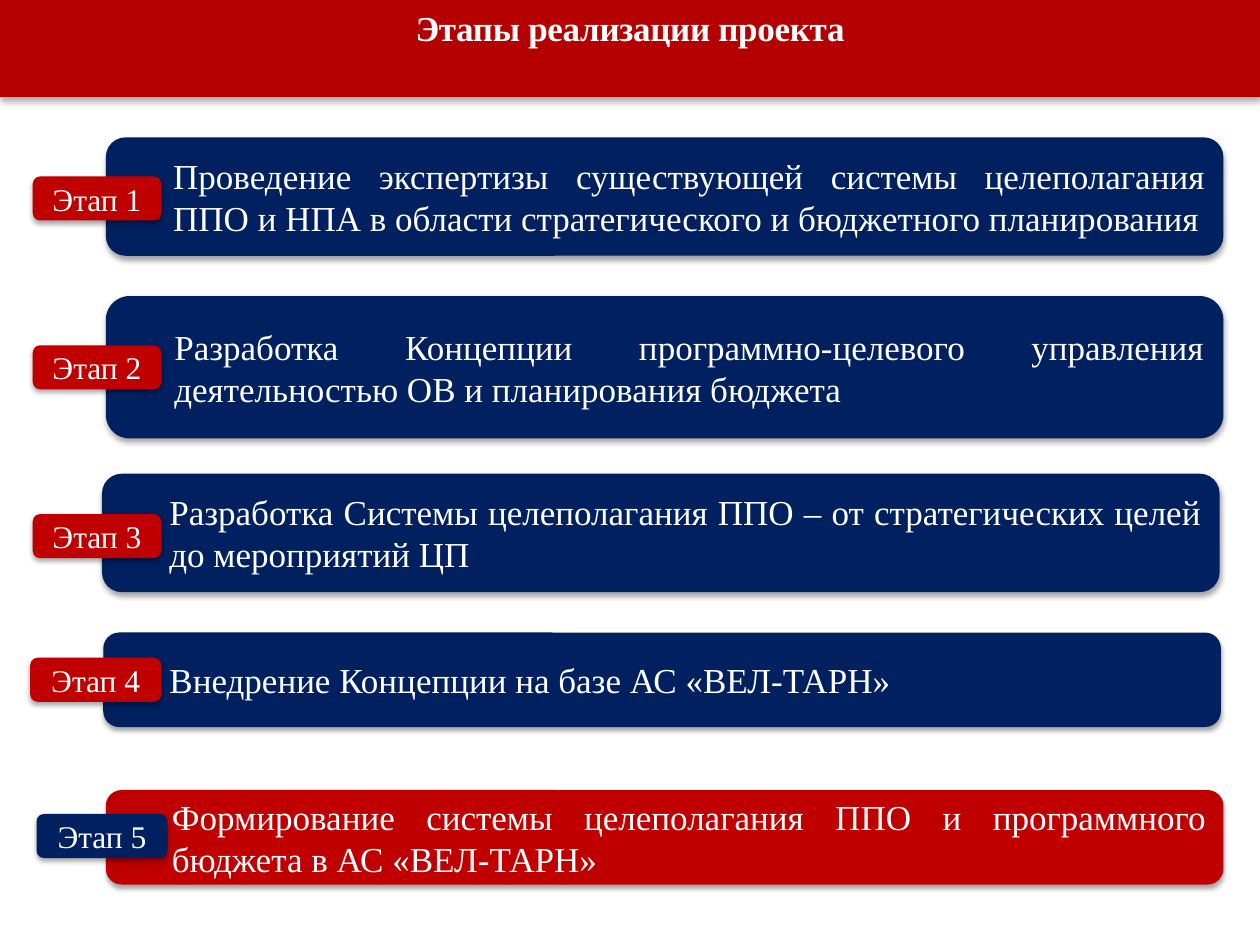
from lxml import etree
from pptx import Presentation
from pptx import util as u
from pptx.dml.color import RGBColor
from pptx.enum import shapes, text
from pptx.oxml import ns

# Grid: 100 columns by 75 rows of equal square cells
COLUMNS, ROWS = 100, 75
CELL = u.Inches(0.1)
FONT = "Times New Roman"
NAVY, RED, HEADER_RED, WHITE = "002060", "C00000", "B40000", "FFFFFF"
BAR_WIDTH, BADGE_HEIGHT = 88.7, 3.5
TEXT_INDENT = u.Inches(0.39)

# Bar left, top, height; badge left, top, width; bar text
STAGES = [
    (8.4, 10.9, 9.4, 2.6, 14.0, 10.2,
     "Проведение экспертизы существующей системы целеполагания ППО и НПА "
     "в области стратегического и бюджетного планирования"),
    (8.4, 23.5, 11.3, 2.6, 27.4, 10.2,
     "Разработка Концепции программно-целевого управления "
     "деятельностью ОВ и планирования бюджета"),
    (8.1, 37.6, 9.4, 2.6, 40.8, 10.2,
     "Разработка Системы целеполагания ППО – от стратегических целей "
     "до мероприятий ЦП"),
    (8.2, 50.2, 7.5, 2.4, 52.2, 10.4,
     "Внедрение Концепции на базе АС «ВЕЛ-ТАРН»"),
    (8.4, 62.7, 7.5, 2.9, 64.6, 10.4,
     "Формирование системы целеполагания ППО и программного "
     "бюджета в АС «ВЕЛ-ТАРН»"),
]


def color(hex_code):
    return RGBColor.from_string(hex_code)


def add_shadow(panel, opacity, blur, distance):
    """Cast a soft black shadow straight down."""
    panel.shadow.inherit = False
    effects = panel._element.spPr.find(ns.qn("a:effectLst"))
    shadow = etree.SubElement(
        effects, ns.qn("a:outerShdw"), blurRad=str(u.Pt(blur)),
        dist=str(u.Pt(distance)), dir="5400000", rotWithShape="0")
    black = etree.SubElement(shadow, ns.qn("a:srgbClr"), val="000000")
    etree.SubElement(black, ns.qn("a:alpha"), val=str(opacity * 1000))


def add_panel(slide, box, kind, fill, wording, size, align,
              anchor=text.MSO_ANCHOR.MIDDLE, shadow=(35, 3.1, 1.8)):
    """Place a filled, captioned shape and return its paragraph."""
    panel = slide.shapes.add_shape(kind, *(round(n * CELL) for n in box))
    panel.fill.solid()
    panel.fill.fore_color.rgb = color(fill)
    panel.line.fill.background()
    add_shadow(panel, *shadow)
    frame = panel.text_frame
    frame.word_wrap = True
    frame.vertical_anchor = anchor
    caption = frame.paragraphs[0]
    caption.text = wording
    caption.alignment = align
    caption.font.name = FONT
    caption.font.size = u.Pt(size)
    caption.font.color.rgb = color(WHITE)
    return caption


def add_header(slide, box):
    title = add_panel(slide, box, shapes.MSO_SHAPE.RECTANGLE, HEADER_RED,
                      "Этапы реализации проекта", 20, text.PP_ALIGN.CENTER,
                      text.MSO_ANCHOR.TOP, (32, 3.5, 2.2))
    title.font.bold = True
    title.runs[0]._r.get_or_add_rPr().set("spc", "-20")


def add_stage(slide, bar_box, badge_offset, badge_width, number, wording,
              bar_fill, badge_fill):
    """Place a stage bar and the badge that overlaps its left edge."""
    rounded = shapes.MSO_SHAPE.ROUNDED_RECTANGLE
    description = add_panel(slide, bar_box, rounded, bar_fill, wording, 20,
                            text.PP_ALIGN.JUSTIFY)
    properties = description._p.get_or_add_pPr()
    properties.set("marL", str(TEXT_INDENT))
    properties.set("indent", "0")

    badge_box = (bar_box[0] + badge_offset[0], bar_box[1] + badge_offset[1],
                 badge_width, BADGE_HEIGHT)
    add_panel(slide, badge_box, rounded, badge_fill, f"Этап {number}", 18,
              text.PP_ALIGN.CENTER)


def main():
    deck = Presentation()
    deck.slide_width, deck.slide_height = COLUMNS * CELL, ROWS * CELL
    slide = deck.slides.add_slide(deck.slide_layouts[6])

    # Header band
    add_header(slide, (0, 0, COLUMNS, 7.7))

    # Stages; the final one swaps its colours
    for number, stage in enumerate(STAGES, start=1):
        left, top, height, badge_left, badge_top, badge_width, wording = stage
        fills = (RED, NAVY) if number == len(STAGES) else (NAVY, RED)
        add_stage(slide, (left, top, BAR_WIDTH, height),
                  (badge_left - left, badge_top - top), badge_width,
                  number, wording, *fills)

    deck.save("out.pptx")


if __name__ == "__main__":
    main()
